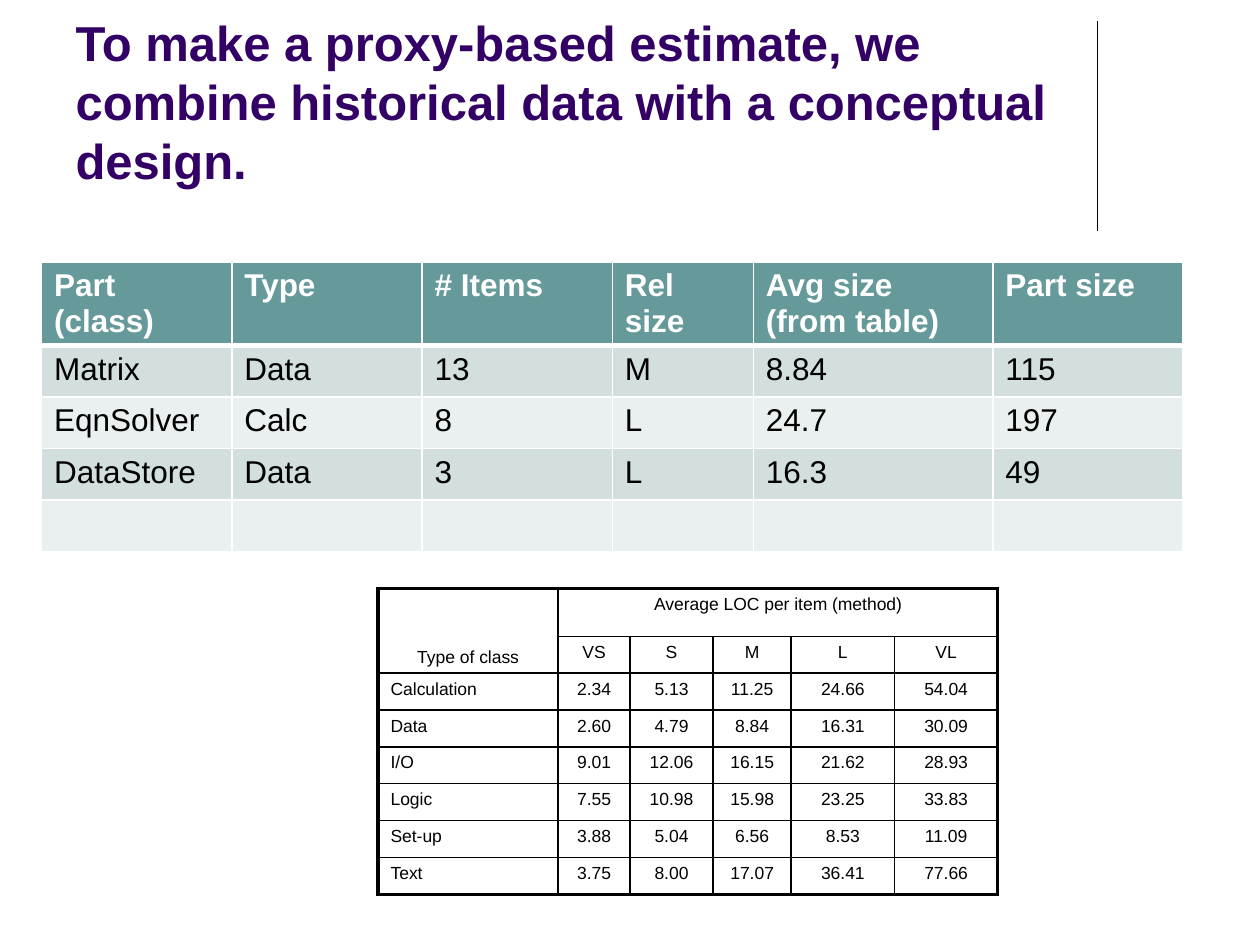
"""Build a slide on proxy-based size estimates with two tables."""
from lxml import etree
from pptx import Presentation
from pptx.dml.color import RGBColor
from pptx.enum.shapes import MSO_CONNECTOR
from pptx.enum.text import MSO_ANCHOR, MSO_AUTO_SIZE, PP_ALIGN
from pptx.oxml.ns import qn
from pptx.util import Inches, Pt

LEFT, CENTER = PP_ALIGN.LEFT, PP_ALIGN.CENTER
TOP, BOTTOM = MSO_ANCHOR.TOP, MSO_ANCHOR.BOTTOM
FIXED = MSO_AUTO_SIZE.NONE
STRAIGHT = MSO_CONNECTOR.STRAIGHT

THEME = {
    "font": "Arial",
    "title": "330066", "ink": "000000", "white": "FFFFFF",
    "head": "669999", "bands": ("D3DEDE", "EAEFEF"),
    "title_pt": 28, "part_pt": 18, "size_pt": 10,
    "thin": 1, "edge": 2.25, "rule": 3, "line": 0.75,
}

TITLE = ("To make a proxy-based estimate, we combine historical data "
         "with a conceptual design.")
PARTS = [
    ("Part (class)", "Type", "# Items", "Rel size", "Avg size\v(from table)", "Part size"),
    ("Matrix", "Data", "13", "M", "8.84", "115"),
    ("EqnSolver", "Calc", "8", "L", "24.7", "197"),
    ("DataStore", "Data", "3", "L", "16.3", "49"),
    ("",) * 6,
]
PART_COLS = (1.51, 1.51, 1.51, 1.12, 1.9, 1.51)
SIZES = [
    ("Type of class", "Average LOC per item (method)", "", "", "", ""),
    ("", "VS", "S", "M", "L", "VL"),
    ("Calculation", "2.34", "5.13", "11.25", "24.66", "54.04"),
    ("Data", "2.60", "4.79", "8.84", "16.31", "30.09"),
    ("I/O", "9.01", "12.06", "16.15", "21.62", "28.93"),
    ("Logic", "7.55", "10.98", "15.98", "23.25", "33.83"),
    ("Set-up", "3.88", "5.04", "6.56", "8.53", "11.09"),
    ("Text", "3.75", "8.00", "17.07", "36.41", "77.66"),
]
SIZE_COLS = (1.43, 0.57, 0.66, 0.62, 0.82, 0.82)


def write(frame, text, size, color, bold=False, align=LEFT):
    para = frame.paragraphs[0]
    para.text = text
    para.alignment = align
    for run in para.runs:
        font = run.font
        font.name, font.size, font.bold = THEME["font"], Pt(size), bold
        font.color.rgb = RGBColor.from_string(color)


def border(cell, color, **widths):
    props = cell._tc.get_or_add_tcPr()
    for spot, side in enumerate("LRTB"):
        line = etree.Element(qn("a:ln" + side), w=str(Pt(widths[side])))
        fill = etree.SubElement(line, qn("a:solidFill"))
        etree.SubElement(fill, qn("a:srgbClr"), val=color)
        props.insert(spot, line)


def grid(slide, left, top, cols, rows):
    frame = slide.shapes.add_table(
        len(rows), len(cols), Inches(left), Inches(top),
        Inches(sum(cols)), Inches(sum(rows)))
    table = frame.table
    table.first_row = table.horz_banding = False
    for col, width in zip(table.columns, cols):
        col.width = Inches(width)
    for row, height in zip(table.rows, rows):
        row.height = Inches(height)
    return table


def add_parts(slide):
    table = grid(slide, 0.33, 2.08, PART_COLS, [0.64] + [0.41] * 4)
    thin, rule = THEME["thin"], THEME["rule"]
    for r, row in enumerate(PARTS):
        head = r == 0
        fill = THEME["head"] if head else THEME["bands"][(r - 1) % 2]
        for c, text in enumerate(row):
            cell = table.cell(r, c)
            cell.fill.solid()
            cell.fill.fore_color.rgb = RGBColor.from_string(fill)
            write(cell.text_frame, text, THEME["part_pt"],
                  THEME["white" if head else "ink"], bold=head)
            border(cell, THEME["white"], L=thin, R=thin,
                   T=rule if r == 1 else thin, B=rule if head else thin)


def add_sizes(slide):
    first, total = 0.38, 2.43
    count = len(SIZES)
    step = (total - first) / (count - 1)
    table = grid(slide, 3, 4.67, SIZE_COLS, [first] + [step] * (count - 1))
    table.cell(0, 0).merge(table.cell(1, 0))
    table.cell(0, 1).merge(table.cell(0, 5))

    def width(outer):
        return THEME["edge" if outer else "thin"]

    for r, row in enumerate(SIZES):
        for c, text in enumerate(row):
            cell = table.cell(r, c)
            cell.fill.background()
            cell.vertical_anchor = BOTTOM if r == c == 0 else TOP
            if not cell.is_spanned:
                write(cell.text_frame, text, THEME["size_pt"], THEME["ink"],
                      align=CENTER if c or r == 0 else LEFT)
            border(cell, THEME["ink"], L=width(c == 0), T=width(r == 0),
                   R=width(c + cell.span_width == len(row)),
                   B=width(r + cell.span_height == count))


def add_title(slide):
    title = slide.shapes.title
    title.left, title.top = Inches(0.5), Inches(0.13)
    title.width, title.height = Inches(8.25), Inches(1.42)
    frame = title.text_frame
    frame.word_wrap, frame.auto_size = True, FIXED
    frame.vertical_anchor = BOTTOM
    write(frame, TITLE, THEME["title_pt"], THEME["title"], bold=True)


def add_rule(slide):
    line = slide.shapes.add_connector(
        STRAIGHT, Inches(8.71), Inches(0.17), Inches(8.71), Inches(1.83))
    line.line.color.rgb = RGBColor.from_string(THEME["ink"])
    line.line.width = Pt(THEME["line"])
    etree.SubElement(line._element.spPr, qn("a:effectLst"))


def main():
    deck = Presentation()
    deck.slide_width, deck.slide_height = Inches(10), Inches(7.5)
    slide = deck.slides.add_slide(deck.slide_layouts[5])
    add_rule(slide)
    add_title(slide)
    add_sizes(slide)
    add_parts(slide)
    deck.save("out.pptx")


if __name__ == "__main__":
    main()
